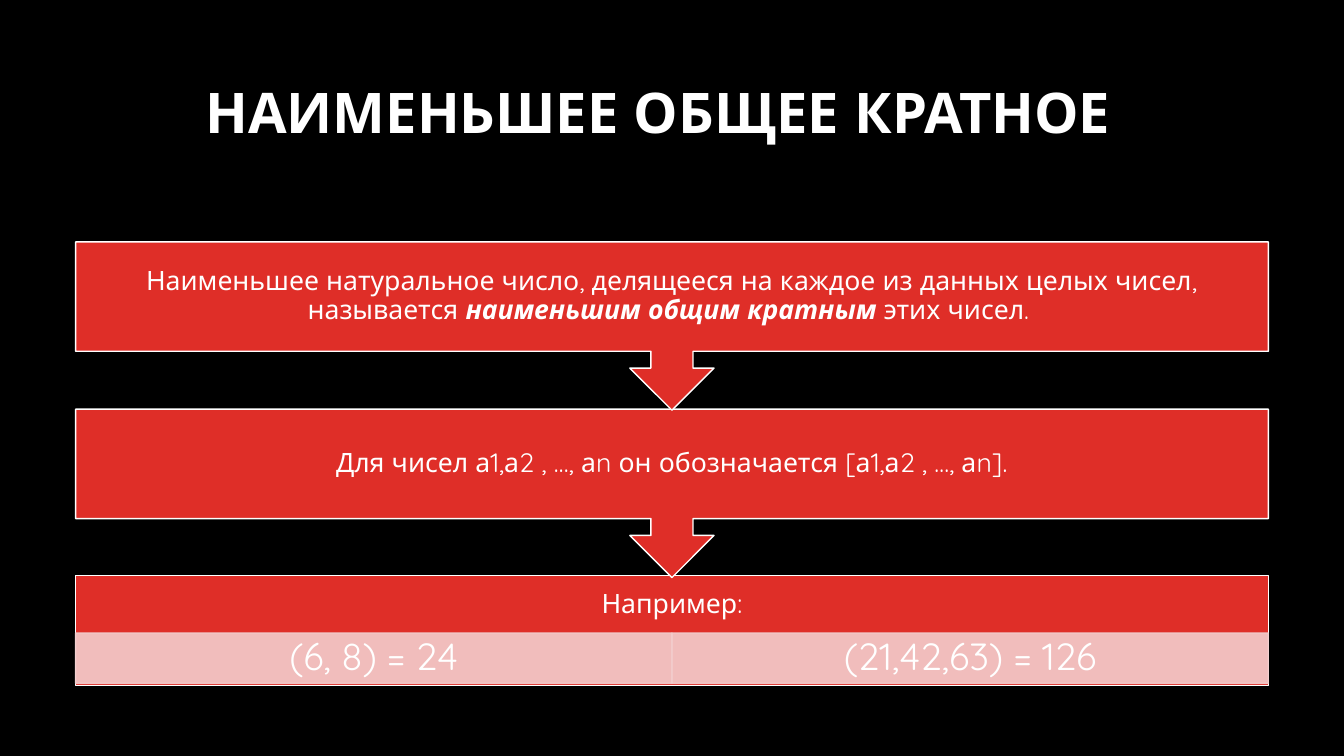
import pptx
import pptx.util
import pptx.dml.color
import pptx.enum.shapes
import pptx.enum.text
import lxml.etree

Inches = pptx.util.Inches
Shape = pptx.enum.shapes.MSO_SHAPE
COLORS = {"back": "000000", "red": "DF2E28", "pink": "F3CDCD", "white": "FFFFFF"}
FONT = "Quicksand"
LEFT, TOP, WIDTH = 0.75, 2.4, 11.83
STEP, ARROW, BOX = 1.66, 1.67, 1.09
STEPS = [
    [("Наименьшее натуральное число, делящееся на каждое из данных целых чисел, называется ", False),
     ("наименьшим общим кратным", True),
     (" этих чисел. ", False)],
    [("Для чисел а1,а2 , …, аn он обозначается [а1,а2 , …, аn].", False)],
]
SAMPLES = ["(6, 8) = 24", "(21,42,63) = 126"]


def color(name):
    return pptx.dml.color.RGBColor.from_string(COLORS[name])


def write(shape, runs, size, pads, bold=None):
    frame = shape.text_frame
    frame.word_wrap = True
    frame.vertical_anchor = pptx.enum.text.MSO_ANCHOR.MIDDLE
    sides = ("margin_left", "margin_top", "margin_right", "margin_bottom")
    for side, pad in zip(sides, pads):
        setattr(frame, side, Inches(pad))
    para = frame.paragraphs[0]
    para.alignment = pptx.enum.text.PP_ALIGN.CENTER
    para.line_spacing = 0.9
    para.font.name = FONT
    para.font.size = pptx.util.Pt(size)
    para.font.bold = bold
    para.font.color.rgb = color("white")
    for text, strong in runs:
        run = para.add_run()
        run.text = text
        if strong:
            run.font.bold = run.font.italic = True


def fade(fill):
    for node in fill.iter(pptx.oxml.ns.qn("a:srgbClr")):
        lxml.etree.SubElement(node, pptx.oxml.ns.qn("a:alpha"), val="90000")


def block(slide, kind, box, fill, line):
    shape = slide.shapes.add_shape(kind, *map(Inches, box))
    shape.shadow.inherit = False
    shape.fill.solid()
    shape.fill.fore_color.rgb = color(fill)
    shape.line.color.rgb = color(line)
    shape.line.width = pptx.util.Pt(1)
    return shape


def title(slide, box):
    shape = slide.shapes.add_textbox(*map(Inches, box))
    write(shape, [("НАИМЕНЬШЕЕ ОБЩЕЕ КРАТНОЕ", False)], 40, (0.1, 0.05, 0.1, 0.05), True)


def sample(slide, box):
    left, top, width, height = box
    head = 0.59
    shape = block(slide, Shape.RECTANGLE, box, "red", "white")
    write(shape, [("Например:", False)], 19, (0.15, 0.15, 0.15, height - head + 0.15))
    cell = width / len(SAMPLES)
    for i, text in enumerate(SAMPLES):
        part = block(slide, Shape.RECTANGLE, (left + i * cell, top + 0.57, cell, 0.5), "pink", "pink")
        fade(part._element.spPr)
        write(part, [(text, False)], 27, (0.21, 0.04, 0.21, 0.04))


def steps(slide, box):
    left, top, width, height = box
    for i, runs in reversed(list(enumerate(STEPS))):
        place = (left, top + i * STEP, width, height)
        shape = block(slide, Shape.DOWN_ARROW_CALLOUT, place, "red", "white")
        write(shape, runs, 19, (0.15,) * 4)


def main():
    deck = pptx.Presentation()
    deck.slide_width, deck.slide_height = Inches(13.33), Inches(7.5)
    slide = deck.slides.add_slide(deck.slide_layouts[6])
    slide.background.fill.solid()
    slide.background.fill.fore_color.rgb = color("back")
    title(slide, (1.64, 0.44, 9.77, 1.41))
    sample(slide, (LEFT, TOP + len(STEPS) * STEP - 0.01, WIDTH, BOX))
    steps(slide, (LEFT, TOP, WIDTH, ARROW))
    deck.save("out.pptx")


if __name__ == "__main__":
    main()
